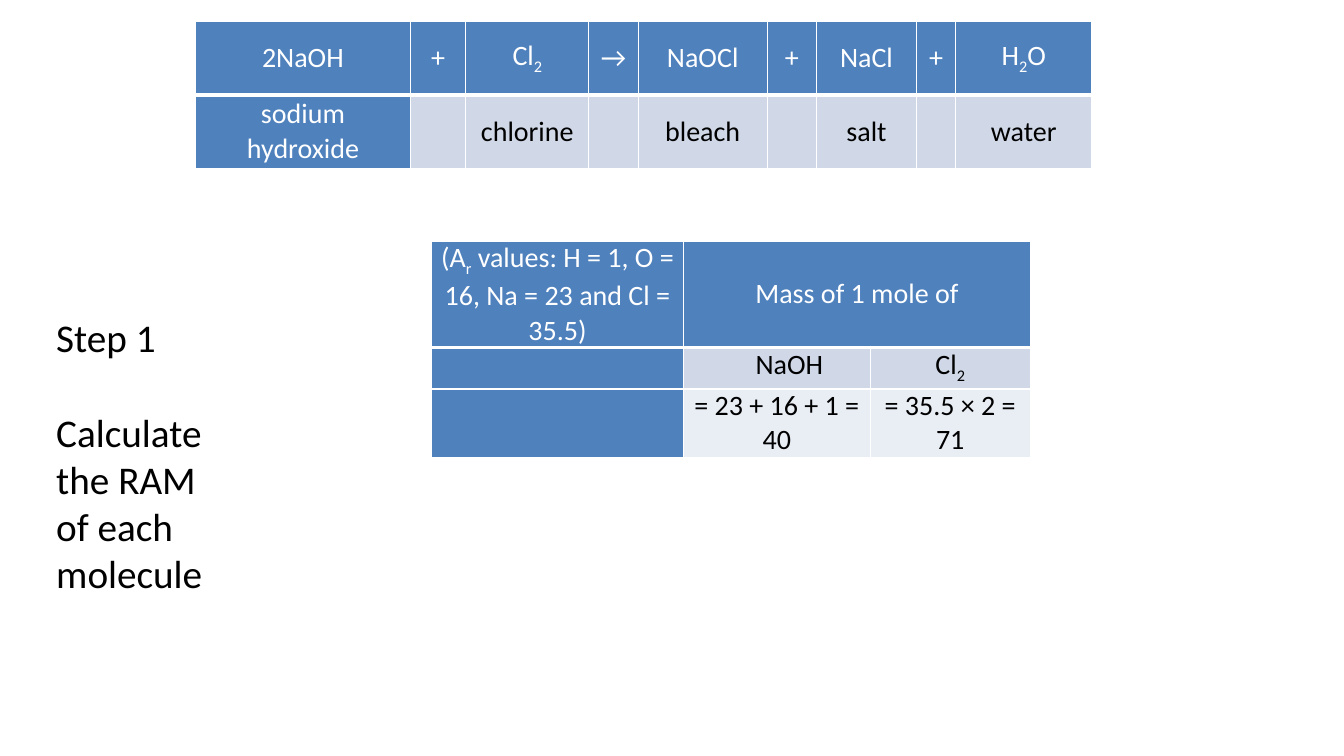
from lxml import etree
from pptx import Presentation
from pptx.dml.color import RGBColor
from pptx.enum.text import MSO_ANCHOR, MSO_AUTO_SIZE, PP_ALIGN
from pptx.oxml.ns import qn
from pptx.util import Pt

PX = 9144  # 100 px to the inch
FONT = "Calibri"
BLACK = RGBColor(0x00, 0x00, 0x00)
WHITE = RGBColor(0xFF, 0xFF, 0xFF)
BLUE = RGBColor(0x4F, 0x81, 0xBD)
BAND_DARK = RGBColor(0xD0, 0xD8, 0xE8)
BAND_LIGHT = RGBColor(0xE9, 0xED, 0xF4)
TOP, MIDDLE = MSO_ANCHOR.TOP, MSO_ANCHOR.MIDDLE
CENTER = PP_ALIGN.CENTER
FIT_SHAPE = MSO_AUTO_SIZE.SHAPE_TO_FIT_TEXT


def px(*lengths):
    return [length * PX for length in lengths]


def add_run(paragraph, text, size, color):
    run = paragraph.add_run()
    run.text = text
    run.font.name = FONT
    run.font.size = Pt(size)
    run.font.bold = False
    run.font.color.rgb = color
    return run


def add_formula(paragraph, formula, color):
    """Write the formula, lowering each character that follows an underscore."""
    plain, *lowered = formula.split("_")
    add_run(paragraph, plain, 20, color)
    for part in lowered:
        subscript = add_run(paragraph, part[0], 20, color)
        subscript.font._element.set("baseline", "-25000")
        if part[1:]:
            add_run(paragraph, part[1:], 20, color)


def set_borders(cell, bottom):
    properties = cell._tc.get_or_add_tcPr()
    for place, (side, width) in enumerate(
        (("L", 1), ("R", 1), ("T", 1), ("B", bottom))
    ):
        line = etree.Element(qn(f"a:ln{side}"), w=str(Pt(width)))
        fill = etree.SubElement(line, qn("a:solidFill"))
        etree.SubElement(fill, qn("a:srgbClr"), val=str(WHITE))
        properties.insert(place, line)


def add_banded_table(slide, box, widths, heights, rows, body_anchor):
    """Add a table with a blue first row and column, and return it."""
    table = slide.shapes.add_table(len(rows), len(widths), *px(*box)).table
    for column, width in zip(table.columns, widths):
        column.width = width * PX
    for row, height in zip(table.rows, heights):
        row.height = height * PX
    for r, formulas in enumerate(rows):
        for c, formula in enumerate(formulas):
            cell = table.cell(r, c)
            is_header = r == 0 or c == 0
            cell.fill.solid()
            cell.fill.fore_color.rgb = (
                BLUE if is_header else BAND_DARK if r == 1 else BAND_LIGHT
            )
            set_borders(cell, 3 if r == 0 else 1)
            cell.margin_left = cell.margin_right = 7 * PX
            cell.margin_top = cell.margin_bottom = 0
            cell.vertical_anchor = MIDDLE if r == 0 else body_anchor
            if formula:
                paragraph = cell.text_frame.paragraphs[0]
                paragraph.alignment = CENTER
                paragraph.space_before = paragraph.space_after = Pt(3)
                add_formula(paragraph, formula, WHITE if is_header else BLACK)
    return table


def add_equation(slide, box):
    rows = [
        ["2NaOH", "+", "Cl_2", "→", "NaOCl", "+", "NaCl", "+", "H_2O"],
        ["sodium hydroxide", "", "chlorine", "", "bleach", "", "salt", "", "water"],
    ]
    widths = [213, 55, 122, 49, 128, 49, 99, 39, 135]
    add_banded_table(slide, box, widths, [73, 73], rows, MIDDLE)


def add_mole_masses(slide, box):
    rows = [
        ["(A_r values: H = 1, O = 16, Na = 23 and Cl = 35.5)", "Mass of 1 mole of", ""],
        ["", "NaOH", "Cl_2"],
        ["", "= 23 + 16 + 1 = 40", "= 35.5 × 2 = 71"],
    ]
    table = add_banded_table(slide, box, [250, 185, 159], [103, 41, 57], rows, TOP)
    table.cell(0, 1).merge(table.cell(0, 2))
    table.cell(1, 1).margin_left = 32 * PX


def add_step(slide, box):
    frame = slide.shapes.add_textbox(*px(*box)).text_frame
    frame.word_wrap = True
    frame.auto_size = FIT_SHAPE
    add_run(frame.paragraphs[0], "Step 1", 28, BLACK)
    task = frame.add_paragraph()
    task.space_before = Pt(34)
    add_run(task, "Calculate the RAM of each molecule", 28, BLACK)


def main():
    deck = Presentation()
    deck.slide_width, deck.slide_height = px(1333, 750)
    slide = deck.slides.add_slide(deck.slide_layouts[6])
    add_mole_masses(slide, (428, 239, 594, 201))
    add_equation(slide, (194, 21, 889, 146))
    add_step(slide, (46, 306, 196, 293))
    deck.save("out.pptx")


if __name__ == "__main__":
    main()
